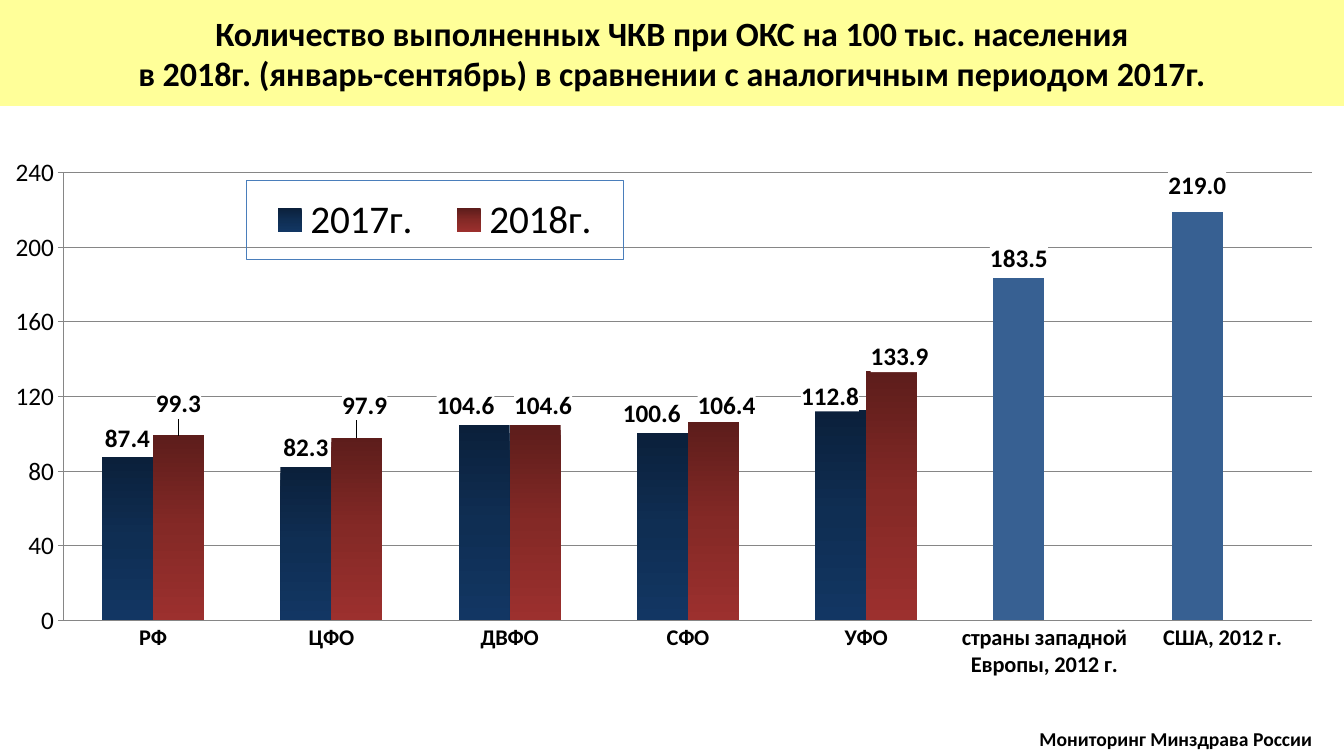
import copy
import pptx
import pptx.chart.data
import pptx.dml.color
import pptx.enum.chart
import pptx.enum.text
import pptx.oxml
import pptx.oxml.ns
import pptx.util

WIDE, HIGH = 13.33, 7.5
FONT = "Calibri"
NS = pptx.oxml.ns.nsdecls("c", "a")

GROUPS = ["РФ", "ЦФО", "ДВФО", "СФО", "УФО",
          "страны западной Европы, 2012 г.", "США, 2012 г."]
# Each year: name, values, gradient, label shifts in shares of the chart
YEARS = [
    ("2017г.", [87.4, 82.3, 104.6, 100.6, 112.8, 183.5, 219],
     ["0B203B", "0F2E53", "123663"],
     {2: (-0.014, 0), 3: (-0.008, 0), 4: (-0.008, 0.01), 6: (0, -0.014)}),
    ("2018г.", [99.3, 97.9, 104.6, 106.4, 133.9, None, None],
     ["5D1D1B", "842926", "9C302E"],
     {0: (0, -0.022), 1: (0.006, -0.024), 2: (0.006, 0),
      3: (0.01, 0.006), 4: (0.006, 0.01)}),
]
ABROAD = (5, 6)


def rgb(code):
    return pptx.dml.color.RGBColor.from_string(code)


def area(left, top, width, height):
    """Turn shares of the slide into lengths."""
    return [pptx.util.Inches(share * size) for share, size in
            zip((left, top, width, height), (WIDE, HIGH, WIDE, HIGH))]


def style(font, size, bold=False):
    font.name = FONT
    font.size = pptx.util.Pt(size)
    font.bold = bold
    font.color.rgb = rgb("000000")


def write(para, lines, size):
    for num, line in enumerate(lines):
        if num:
            para.add_line_break()
        run = para.add_run()
        run.text = line
        style(run.font, size, True)


def add_title(slide, lines):
    title = slide.shapes.title
    title.left, title.top, title.width, title.height = area(0, 0, 1, 0.14)
    title.fill.solid()
    title.fill.fore_color.rgb = rgb("FFFF99")
    frame = title.text_frame
    frame.word_wrap = True
    frame.auto_size = pptx.enum.text.MSO_AUTO_SIZE.NONE
    frame.vertical_anchor = pptx.enum.text.MSO_ANCHOR.MIDDLE
    para = frame.paragraphs[0]
    para.alignment = pptx.enum.text.PP_ALIGN.CENTER
    write(para, lines, 24.3)


def add_note(slide, text):
    box = slide.shapes.add_textbox(*area(0.766, 0.955, 0.219, 0.045))
    box.text_frame.word_wrap = False
    box.text_frame.auto_size = pptx.enum.text.MSO_AUTO_SIZE.SHAPE_TO_FIT_TEXT
    write(box.text_frame.paragraphs[0], [text], 14)


def layout(pairs):
    """Manual chart layout from tag and value pairs."""
    tags = "".join(f'<c:{tag} val="{val}"/>' for tag, val in pairs)
    return pptx.oxml.parse_xml(
        f"<c:layout {NS}><c:manualLayout>{tags}</c:manualLayout></c:layout>")


def place(left, top, width, height):
    return [("xMode", "edge"), ("yMode", "edge"),
            ("x", left), ("y", top), ("w", width), ("h", height)]


def shade(fill, codes):
    """Even gradient from top to bottom."""
    fill.gradient()
    fill.gradient_angle = 270
    first = fill.gradient_stops[0]._gs
    first.addnext(copy.deepcopy(first))
    for num, (stop, code) in enumerate(zip(fill.gradient_stops, codes)):
        stop.position = num / (len(codes) - 1)
        stop.color.rgb = rgb(code)


def add_labels(bars, shifts):
    labels = bars.data_labels
    labels.show_value = True
    labels.number_format = "0.0"
    labels.number_format_is_linked = False
    labels.position = pptx.enum.chart.XL_LABEL_POSITION.OUTSIDE_END
    style(labels.font, 18, True)
    root = labels._element
    root.find(pptx.oxml.ns.qn("c:txPr")).addprevious(pptx.oxml.parse_xml(
        f'<c:spPr {NS}><a:solidFill><a:srgbClr val="FFFFFF"/></a:solidFill>'
        "</c:spPr>"))
    parts = [part for part in root if not part.tag.endswith("LeaderLines")]
    for spot, (idx, (right, down)) in enumerate(shifts.items()):
        label = pptx.oxml.parse_xml(
            f'<c:dLbl {NS}><c:idx val="{idx}"/></c:dLbl>')
        label.append(layout([("x", right), ("y", down)]))
        label.extend([copy.deepcopy(part) for part in parts])
        root.insert(spot, label)


def add_axes(chart):
    marks = pptx.enum.chart.XL_TICK_MARK
    groups, scale = chart.category_axis, chart.value_axis
    groups.major_tick_mark = marks.NONE
    style(groups.tick_labels.font, 16, True)
    scale.minimum_scale, scale.maximum_scale = 0, 240
    scale.major_unit = 40
    scale.major_tick_mark = marks.OUTSIDE
    scale.has_major_gridlines = True
    scale.tick_labels.number_format = "0"
    scale.tick_labels.number_format_is_linked = False
    style(scale.tick_labels.font, 18)
    for part in (groups, scale, scale.major_gridlines):
        part.format.line.color.rgb = rgb("868686")
        part.format.line.width = pptx.util.Pt(0.75)


def add_legend(chart):
    chart.has_legend = True
    legend = chart.legend
    legend.position = pptx.enum.chart.XL_LEGEND_POSITION.RIGHT
    legend.include_in_layout = True
    style(legend.font, 28)
    root = legend._element
    for old in root.findall(pptx.oxml.ns.qn("c:layout")):
        root.remove(old)
    root.find(pptx.oxml.ns.qn("c:legendPos")).addnext(
        layout(place(0.185, 0.044, 0.283, 0.145)))
    root.find(pptx.oxml.ns.qn("c:txPr")).addprevious(pptx.oxml.parse_xml(
        f'<c:spPr {NS}><a:noFill/><a:ln w="9525"><a:solidFill>'
        '<a:srgbClr val="4A7EBB"/></a:solidFill></a:ln></c:spPr>'))


def add_chart(slide):
    data = pptx.chart.data.CategoryChartData(number_format="0.0")
    data.categories = GROUPS
    for name, vals, *_ in YEARS:
        data.add_series(name, vals)
    chart = slide.shapes.add_chart(
        pptx.enum.chart.XL_CHART_TYPE.COLUMN_CLUSTERED,
        *area(0, 0.207, 0.991, 0.721), data).chart
    chart.has_title = False
    style(chart.font, 18)
    plot = chart.plots[0]
    plot.gap_width, plot.overlap = 150, 0
    plot.vary_by_categories = False

    # Bars and their labels
    for bars, (_, _, codes, shifts) in zip(plot.series, YEARS):
        bars.invert_if_negative = False
        shade(bars.format.fill, codes)
        add_labels(bars, shifts)
    for idx in ABROAD:
        fill = plot.series[0].points[idx].format.fill
        fill.solid()
        fill.fore_color.rgb = rgb("376092")

    # Axes, legend and plot area
    add_axes(chart)
    add_legend(chart)
    root = chart._chartSpace.chart.plotArea
    for old in root.findall(pptx.oxml.ns.qn("c:layout")):
        root.remove(old)
    root.insert(0, layout([("layoutTarget", "inner")]
                          + place(0.048, 0.03, 0.937, 0.821)))


def main():
    deck = pptx.Presentation()
    deck.slide_width = pptx.util.Inches(WIDE)
    deck.slide_height = pptx.util.Inches(HIGH)
    slide = deck.slides.add_slide(deck.slide_layouts[5])
    add_title(slide, [
        "Количество выполненных ЧКВ при ОКС на 100 тыс. населения",
        "в 2018г. (январь-сентябрь) в сравнении с аналогичным периодом 2017г."])
    add_chart(slide)
    add_note(slide, "Мониторинг Минздрава России")
    deck.save("out.pptx")


if __name__ == "__main__":
    main()
